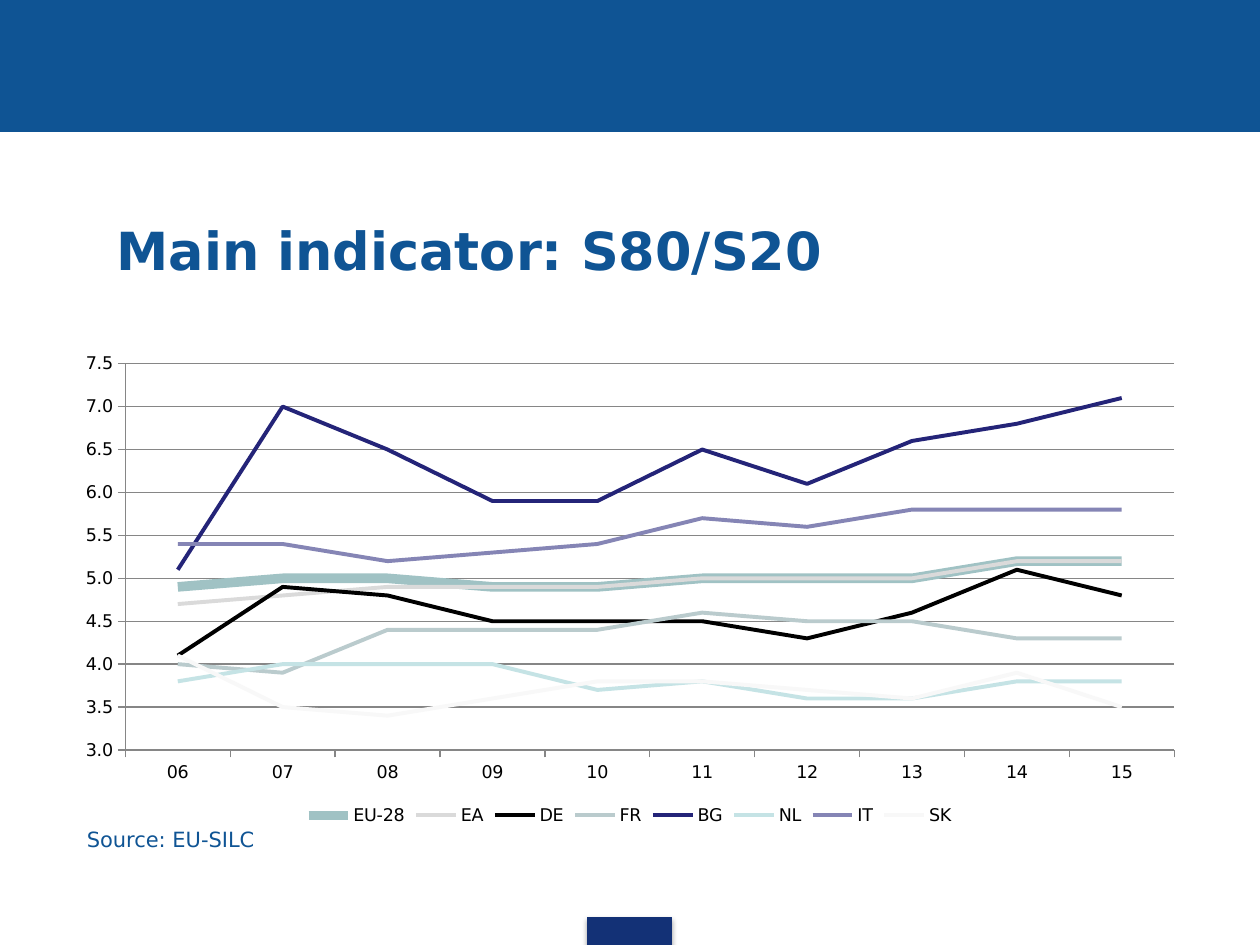
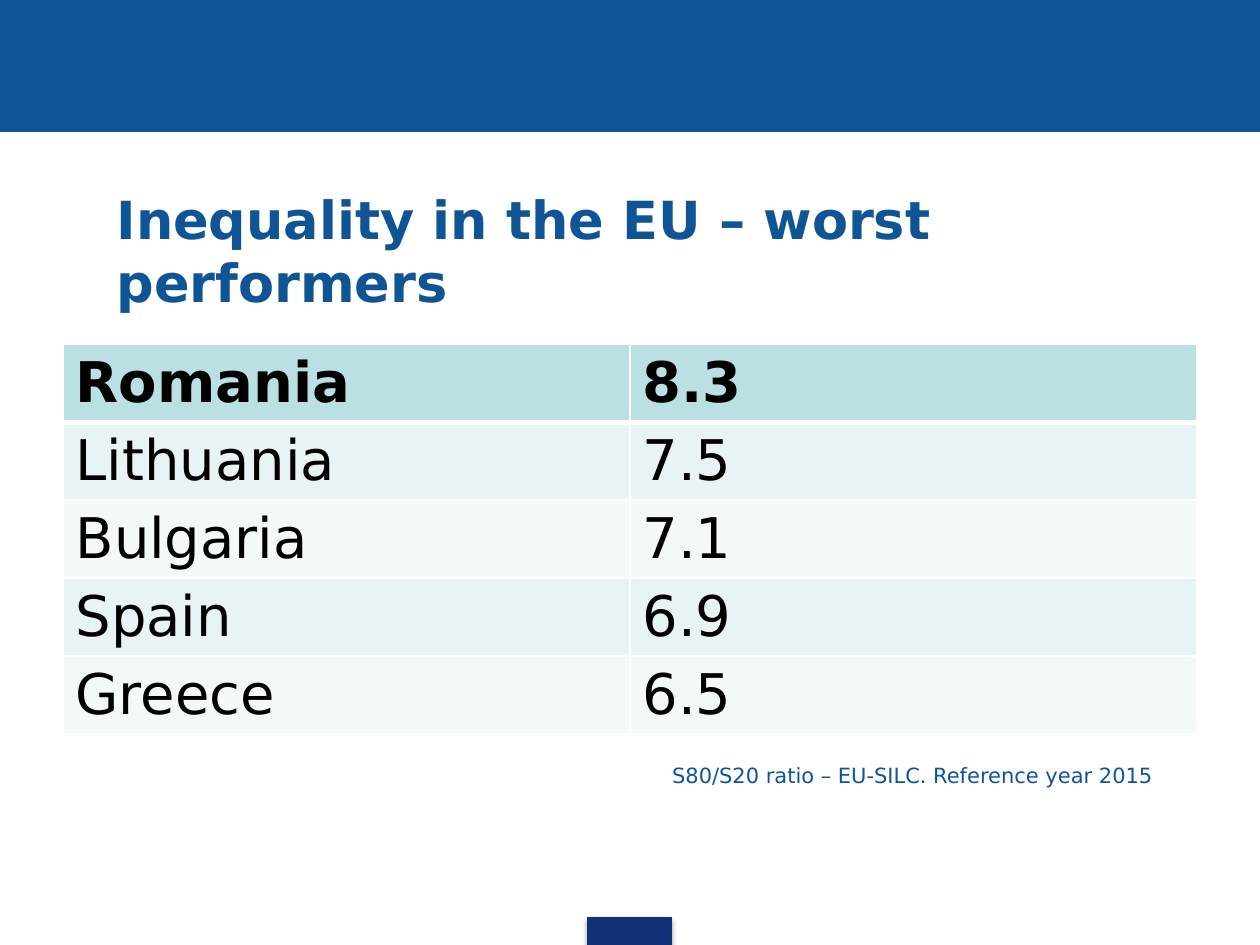
"""Build two slides on income inequality in the EU: a line chart and a ranking table."""
from lxml import etree
from pptx import Presentation
from pptx import util as u
from pptx.chart import data as chart_data
from pptx.dml import color
from pptx.enum import chart as charts, shapes, text
from pptx.oxml import ns, parse_xml

COLORS = {
    "blue": "0F5494", "navy": "133176", "black": "000000", "white": "FFFFFF", "grid": "868686",
    "header": "BBE0E3", "odd": "E7F3F4", "even": "F3F9FA",
}
YEARS = [f"{year:02d}" for year in range(6, 16)]
SERIES = [
    ("EU-28", "A0C2C4", (4.9, 5, 5, 4.9, 4.9, 5, 5, 5, 5.2, 5.2)),
    ("EA", "DADADA", (4.7, 4.8, 4.9, 4.9, 4.9, 5, 5, 5, 5.2, 5.2)),
    ("DE", "000000", (4.1, 4.9, 4.8, 4.5, 4.5, 4.5, 4.3, 4.6, 5.1, 4.8)),
    ("FR", "BACBCD", (4, 3.9, 4.4, 4.4, 4.4, 4.6, 4.5, 4.5, 4.3, 4.3)),
    ("BG", "242478", (5.1, 7, 6.5, 5.9, 5.9, 6.5, 6.1, 6.6, 6.8, 7.1)),
    ("NL", "C5E3E5", (3.8, 4, 4, 4, 3.7, 3.8, 3.6, 3.6, 3.8, 3.8)),
    ("IT", "8585B5", (5.4, 5.4, 5.2, 5.3, 5.4, 5.7, 5.6, 5.8, 5.8, 5.8)),
    ("SK", "F8F8F8", (4.1, 3.5, 3.4, 3.6, 3.8, 3.8, 3.7, 3.6, 3.9, 3.5)),
]
WORST = [("Romania", "8.3"), ("Lithuania", "7.5"), ("Bulgaria", "7.1"),
         ("Spain", "6.9"), ("Greece", "6.5")]
SHADOW = (
    f'<a:effectLst {ns.nsdecls("a")}><a:outerShdw blurRad="39370" dist="22860" dir="5400000">'
    '<a:srgbClr val="000000"><a:alpha val="35000"/></a:srgbClr></a:outerShdw></a:effectLst>'
)


def rgb(name):
    return color.RGBColor.from_string(COLORS.get(name, name))


class Deck:
    """Hold the deck, its font and the current slide."""

    font_name = "DejaVu Sans"

    def __init__(self):
        self.deck = Presentation()
        self.deck.slide_width, self.deck.slide_height = u.Cm(25.4), u.Cm(19.05)
        self.page = None

    def style(self, font, size, shade, bold=False):
        font.name, font.size, font.bold = self.font_name, u.Pt(size), bold
        font.color.rgb = rgb(shade)

    def add_page(self, title):
        self.page = self.deck.slides.add_slide(self.deck.slide_layouts[5])
        self.add_bar(0, 0, 25.4, 2.66, "blue")
        tab = self.add_bar(11.84, 18.49, 1.7, 0.56, "navy")
        tab.element.spPr.remove(tab.element.spPr.find(ns.qn("a:effectLst")))
        tab.element.spPr.append(parse_xml(SHADOW))
        box = self.page.shapes.title
        box.left, box.top, box.width, box.height = map(u.Cm, (1.1, 3.74, 22.86, 2.6))
        frame = box.text_frame
        frame.text = title
        frame.auto_size = text.MSO_AUTO_SIZE.NONE
        frame.vertical_anchor = text.MSO_ANCHOR.MIDDLE
        frame.margin_left = u.Cm(1.25)
        para = frame.paragraphs[0]
        para.alignment = text.PP_ALIGN.LEFT
        self.style(para.font, 30, "blue", bold=True)

    def add_bar(self, left, top, width, height, shade):
        bar = self.page.shapes.add_shape(
            shapes.MSO_SHAPE.RECTANGLE, *map(u.Cm, (left, top, width, height)))
        bar.shadow.inherit = False
        bar.fill.solid()
        bar.fill.fore_color.rgb = bar.line.color.rgb = rgb(shade)
        bar.line.width = u.Pt(0.75)
        return bar

    def add_note(self, left, top, width, wording):
        box = self.page.shapes.add_textbox(*map(u.Cm, (left, top, width, 0.77)))
        box.text_frame.word_wrap = True
        para = box.text_frame.paragraphs[0]
        para.text = wording
        self.style(para.font, 12, "blue")

    def add_line_chart(self, left, top, width, height, categories, series):
        data = chart_data.CategoryChartData(number_format="0.0")
        data.categories = categories
        for name, _, values in series:
            data.add_series(name, values)
        chart = self.page.shapes.add_chart(
            charts.XL_CHART_TYPE.LINE, *map(u.Cm, (left, top, width, height)), data).chart
        chart.has_title = False
        self.style(chart.font, 10, "black")
        chart.plots[0].vary_by_categories = False
        for index, (line, (_, shade, _)) in enumerate(zip(chart.plots[0].series, series)):
            line.smooth = False
            line.marker.style = charts.XL_MARKER_STYLE.NONE
            line.format.line.color.rgb = rgb(shade)
            line.format.line.width = u.Pt(2.25 if index else 5.5)
        scale = chart.value_axis
        scale.minimum_scale, scale.maximum_scale, scale.major_unit = 3, 7.5, 0.5
        scale.has_major_gridlines = True
        scale.tick_labels.number_format = "#,##0.0"
        scale.tick_labels.number_format_is_linked = False
        for axis in (scale, chart.category_axis):
            axis.major_tick_mark = charts.XL_TICK_MARK.OUTSIDE
            axis.format.line.color.rgb = rgb("grid")
        scale.major_gridlines.format.line.color.rgb = rgb("grid")
        chart.has_legend = True
        chart.legend.position = charts.XL_LEGEND_POSITION.BOTTOM
        chart.legend.include_in_layout = False
        self.place_plot(chart, 0.055, 0.04, 0.925, 0.795)

    def place_plot(self, chart, left, top, width, height):
        area = chart.plots[0]._element.getparent()
        for old in area.findall(ns.qn("c:layout")):
            area.remove(old)
        layout = etree.Element(ns.qn("c:layout"))
        manual = etree.SubElement(layout, ns.qn("c:manualLayout"))
        settings = {"layoutTarget": "inner", "xMode": "edge", "yMode": "edge",
                    "x": left, "y": top, "w": width, "h": height}
        for tag, value in settings.items():
            etree.SubElement(manual, ns.qn(f"c:{tag}"), val=str(value))
        area.insert(0, layout)

    def add_table(self, left, top, width, row_height, rows):
        table = self.page.shapes.add_table(
            len(rows), len(rows[0]),
            *map(u.Cm, (left, top, width, row_height * len(rows)))).table
        table.first_row = table.horz_banding = False
        for number, row in enumerate(rows):
            shade = "header" if number == 0 else "odd" if number % 2 else "even"
            for column, wording in enumerate(row):
                cell = table.cell(number, column)
                cell.text = wording
                self.style(cell.text_frame.paragraphs[0].font, 32, "black", bold=number == 0)
                self.add_borders(cell, 3 if number == 1 else 1, 3 if number == 0 else 1)
                cell.fill.solid()
                cell.fill.fore_color.rgb = rgb(shade)

    def add_borders(self, cell, top, bottom):
        properties = cell._tc.get_or_add_tcPr()
        for side, points in {"L": 1, "R": 1, "T": top, "B": bottom}.items():
            line = etree.SubElement(properties, ns.qn(f"a:ln{side}"), w=str(u.Pt(points)))
            fill = etree.SubElement(line, ns.qn("a:solidFill"))
            etree.SubElement(fill, ns.qn("a:srgbClr"), val=COLORS["white"])

    def save(self):
        self.deck.save("out.pptx")


def main():
    deck = Deck()
    deck.add_page("Main indicator: S80/S20")
    deck.add_line_chart(1.27, 6.94, 22.86, 9.8, YEARS, SERIES)
    deck.add_note(1.5, 16.53, 6.8, "Source: EU-SILC")

    deck.add_page("Inequality in the EU – worst performers")
    deck.add_table(1.27, 6.94, 22.86, 1.57, WORST)
    deck.add_note(13.3, 15.24, 11.5, "S80/S20 ratio – EU-SILC. Reference year 2015")
    deck.save()


if __name__ == "__main__":
    main()
